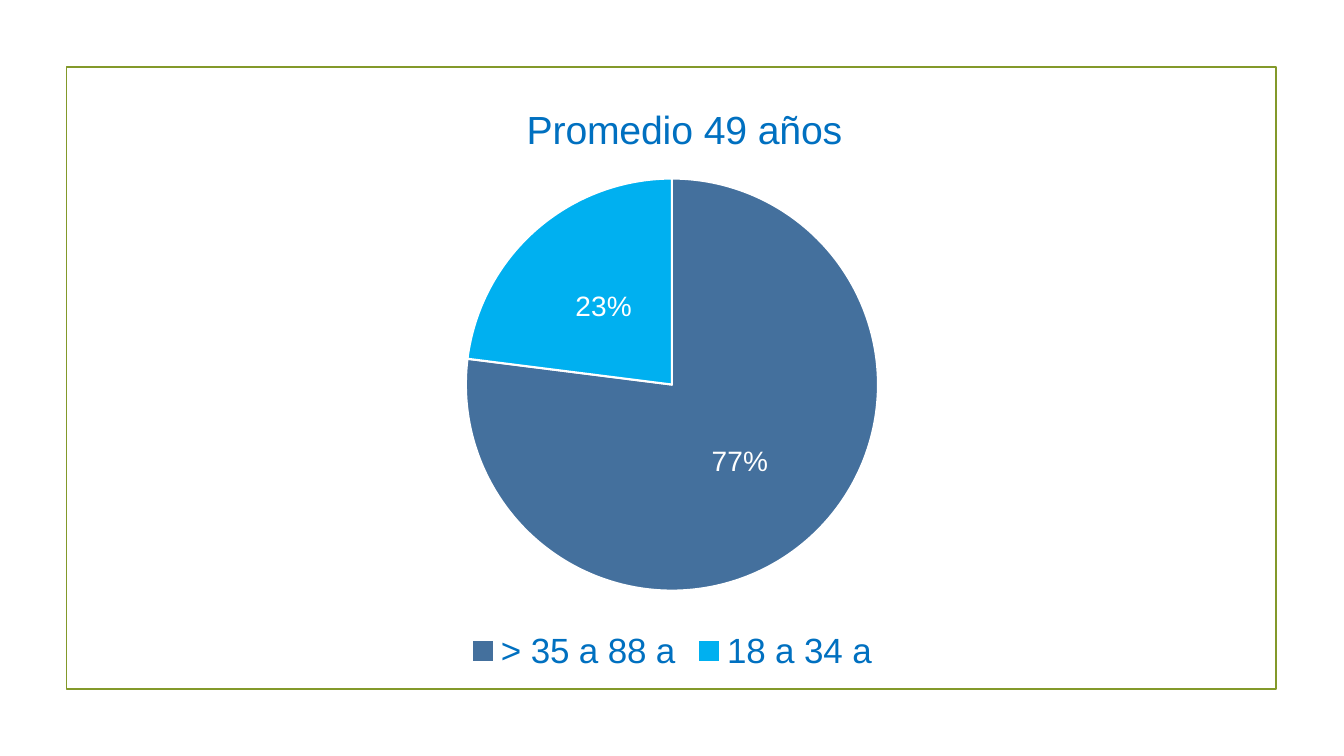
from dataclasses import dataclass

from lxml.etree import SubElement
from pptx import Presentation
from pptx.chart.data import CategoryChartData
from pptx.dml.color import RGBColor
from pptx.enum.chart import XL_CHART_TYPE as ChartType
from pptx.enum.chart import XL_LABEL_POSITION as LabelPosition
from pptx.enum.chart import XL_LEGEND_POSITION as LegendPosition
from pptx.enum.shapes import MSO_SHAPE as ShapeKind
from pptx.oxml.ns import qn
from pptx.util import Pt


@dataclass(frozen=True)
class Theme:
    font: str = "Arial"
    frame: str = "83992A"
    text: str = "0070C0"
    white: str = "FFFFFF"
    slices: tuple = ("44709D", "00B0F0")
    title_size: int = 28
    legend_size: int = 25
    label_size: int = 20


class SlideBuilder:
    def __init__(self, slide, theme):
        self.slide = slide
        self.theme = theme

    def format_font(self, font, size, color):
        font.name = self.theme.font
        font.size = Pt(size)
        font.bold = False
        font.color.rgb = RGBColor.from_string(color)

    def frame(self, left, top, width, height):
        shape = self.slide.shapes.add_shape(
            ShapeKind.RECTANGLE, Pt(left), Pt(top), Pt(width), Pt(height))
        shape.shadow.inherit = False
        shape.fill.background()
        shape.line.color.rgb = RGBColor.from_string(self.theme.frame)
        shape.line.width = Pt(1.25)

    def place(self, element, index, **fractions):
        layout = element.find(qn("c:layout"))
        if layout is not None:
            element.remove(layout)
        layout = element.makeelement(qn("c:layout"), {})
        element.insert(index, layout)
        manual = SubElement(layout, qn("c:manualLayout"))
        if "w" in fractions:
            SubElement(manual, qn("c:layoutTarget")).set("val", "inner")
        for axis in ("x", "y"):
            SubElement(manual, qn(f"c:{axis}Mode")).set("val", "edge")
        for name, value in fractions.items():
            SubElement(manual, qn(f"c:{name}")).set("val", str(value))

    def pie(self, title, shares, left, top, width, height):
        theme = self.theme
        data = CategoryChartData(number_format="0%")
        data.categories = list(shares)
        data.add_series("Series 1", list(shares.values()))
        chart = self.slide.shapes.add_chart(
            ChartType.PIE, Pt(left), Pt(top), Pt(width), Pt(height), data).chart
        self.format_font(chart.font, theme.label_size, theme.text)

        chart.has_title = True
        paragraph = chart.chart_title.text_frame.paragraphs[0]
        paragraph.text = title
        self.format_font(paragraph.runs[0].font, theme.title_size, theme.text)
        chart.chart_title.include_in_layout = False

        chart.has_legend = True
        chart.legend.position = LegendPosition.BOTTOM
        chart.legend.include_in_layout = False
        self.format_font(chart.legend.font, theme.legend_size, theme.text)

        plot = chart.plots[0]
        plot.vary_by_categories = True
        plot.has_data_labels = True
        labels = plot.data_labels
        labels.show_value = True
        labels.show_percentage = False
        labels.number_format = "0%"
        labels.number_format_is_linked = False
        labels.position = LabelPosition.CENTER
        self.format_font(labels.font, theme.label_size, theme.white)

        for index, color in enumerate(theme.slices):
            point = plot.series[0].points[index]
            point.format.fill.solid()
            point.format.fill.fore_color.rgb = RGBColor.from_string(color)
            point.format.line.color.rgb = RGBColor.from_string(theme.white)
            point.format.line.width = Pt(1.5)

        chart_element = chart.element.find(qn("c:chart"))
        self.place(chart_element.find(qn("c:title")), 1, x=0.33, y=0.03)
        self.place(chart_element.find(qn("c:plotArea")), 0,
                   x=0.27, y=0.16, w=0.46, h=0.7)


def main():
    presentation = Presentation()
    presentation.slide_width = Pt(960)
    presentation.slide_height = Pt(540)
    blank_layout = presentation.slide_layouts[6]
    builder = SlideBuilder(presentation.slides.add_slide(blank_layout), Theme())
    builder.frame(47.5, 48, 864, 444)
    builder.pie("Promedio 49 años", {"> 35 a 88 a": 0.77, "18 a 34 a": 0.23},
                160, 57, 640, 427)
    presentation.save("out.pptx")


if __name__ == "__main__":
    main()
